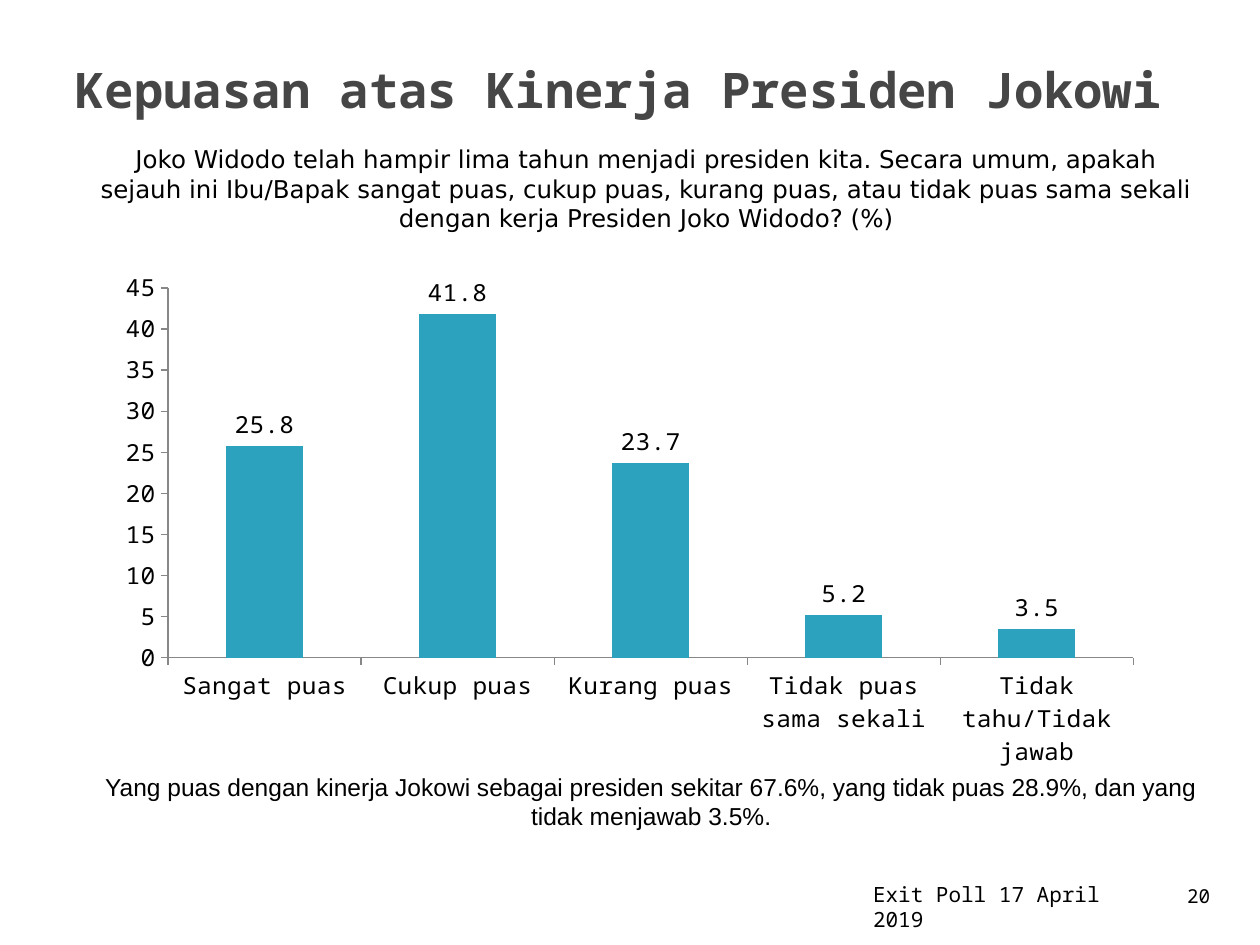
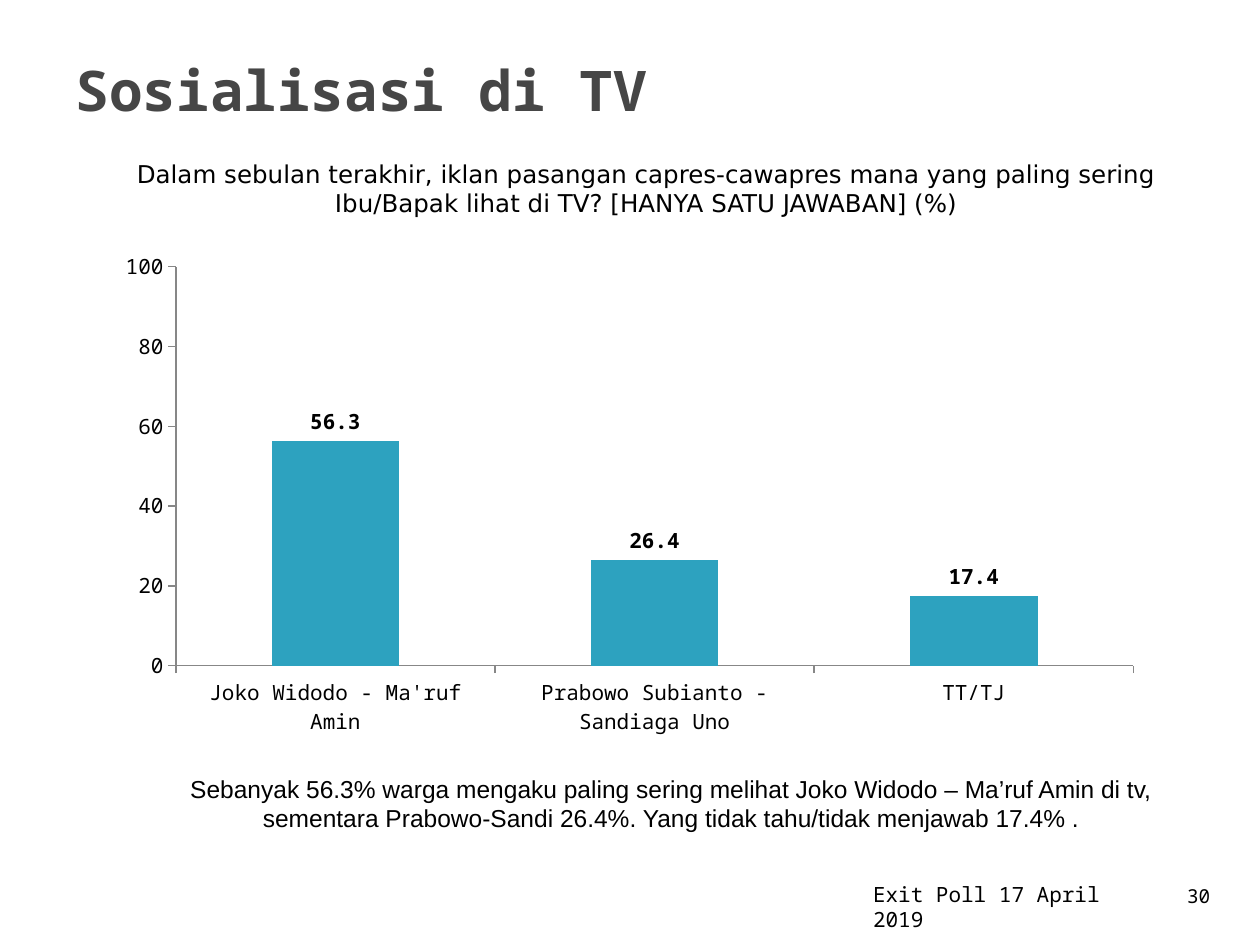
from pptx import Presentation
from pptx.chart.data import CategoryChartData
from pptx.dml.color import RGBColor
from pptx.enum.chart import XL_CHART_TYPE, XL_LABEL_POSITION, XL_TICK_MARK
from pptx.enum.text import MSO_ANCHOR, MSO_AUTO_SIZE, PP_ALIGN
from pptx.util import Cm, Pt

COLUMNS = XL_CHART_TYPE.COLUMN_CLUSTERED
OUTSIDE_END = XL_LABEL_POSITION.OUTSIDE_END
TICK_OUT, TICK_NONE = XL_TICK_MARK.OUTSIDE, XL_TICK_MARK.NONE
TOP, MIDDLE = MSO_ANCHOR.TOP, MSO_ANCHOR.MIDDLE
LEFT, CENTER = PP_ALIGN.LEFT, PP_ALIGN.CENTER
NO_AUTOFIT = MSO_AUTO_SIZE.NONE

MONO, QUESTION_FONT, NOTE_FONT = "Noto Sans Mono", "DejaVu Sans", "Arial"
TITLE_GREY, BLACK, BAR_TEAL, AXIS_GREY = "464646", "000000", "2DA2BF", "878787"
FOOTER = "Exit Poll 17 April 2019"

# Boxes are left, top, width, height in centimetres.
TITLE_BOX = (1.27, 0.2, 22.86, 3.18)
QUESTION_BOX = (1.7, 2.74, 22.66, 2.11)
NUMBER_BOX = (23.11, 17.53, 2.11, 1.07)
FOOTER_BOX = (17.35, 17.65, 5.33, 0.76)

SLIDES = [
    {
        "title": "Kepuasan atas Kinerja Presiden Jokowi",
        "title_size": 28,
        "question": "Joko Widodo telah hampir lima tahun menjadi presiden kita. "
                    "Secara umum, apakah sejauh ini Ibu/Bapak sangat puas, cukup puas, "
                    "kurang puas, atau tidak puas sama sekali dengan kerja "
                    "Presiden Joko Widodo? (%)",
        "chart_box": (2.11, 5.28, 21.16, 10.16),
        "chart_size": 14,
        "answers": {
            "Sangat puas": 25.8,
            "Cukup puas": 41.8,
            "Kurang puas": 23.7,
            "Tidak puas sama sekali": 5.2,
            "Tidak tahu/Tidak jawab": 3.5,
        },
        "maximum": 45,
        "step": 5,
        "label_format": "#,##0.0",
        "label_bold": False,
        "note": "Yang puas dengan kinerja Jokowi sebagai presiden sekitar 67.6%, "
                "yang tidak puas 28.9%, dan yang tidak menjawab 3.5%.",
        "note_box": (1.7, 15.44, 22.86, 1.45),
        "number": "20",
    },
    {
        "title": "Sosialisasi di TV",
        "title_size": 32,
        "question": "Dalam sebulan terakhir, iklan pasangan capres-cawapres mana yang "
                    "paling sering Ibu/Bapak lihat di TV? [HANYA SATU JAWABAN] (%)",
        "chart_box": (2.11, 4.88, 21.16, 10.16),
        "chart_size": 12,
        "answers": {
            "Joko Widodo - Ma'ruf Amin": 56.3,
            "Prabowo Subianto - Sandiaga Uno": 26.4,
            "TT/TJ": 17.4,
        },
        "maximum": 100,
        "step": 20,
        "label_format": "0.0",
        "label_bold": True,
        "note": "Sebanyak 56.3% warga mengaku paling sering melihat Joko Widodo – "
                "Ma’ruf Amin di tv, sementara Prabowo-Sandi 26.4%. "
                "Yang tidak tahu/tidak menjawab 17.4% .",
        "note_box": (2.74, 15.47, 21.59, 1.45),
        "number": "30",
    },
]


def rgb(hex_color):
    return RGBColor.from_string(hex_color)


def write(shape, box, text, font, size, color=BLACK, align=CENTER, anchor=MIDDLE, bold=False):
    """Place a text shape and fill it with one formatted paragraph."""
    for side, length in zip(("left", "top", "width", "height"), box):
        setattr(shape, side, Cm(length))
    frame = shape.text_frame
    frame.word_wrap = True
    frame.auto_size = NO_AUTOFIT
    frame.vertical_anchor = anchor
    frame.text = text
    paragraph = frame.paragraphs[0]
    paragraph.alignment = align
    for name, value in {"name": font, "size": Pt(size), "bold": bold}.items():
        setattr(paragraph.font, name, value)
    paragraph.font.color.rgb = rgb(color)


presentation = Presentation()
presentation.slide_width, presentation.slide_height = Cm(25.4), Cm(19.05)
title_only = presentation.slide_layouts[5]

for content in SLIDES:
    slide = presentation.slides.add_slide(title_only)
    write(slide.shapes.title, TITLE_BOX, content["title"], MONO, content["title_size"],
          color=TITLE_GREY, align=LEFT, bold=True)

    chart_data = CategoryChartData()
    chart_data.categories = content["answers"].keys()
    chart_data.add_series("Series 1", content["answers"].values())
    chart_place = [Cm(length) for length in content["chart_box"]]
    chart = slide.shapes.add_chart(COLUMNS, *chart_place, chart_data).chart
    chart.has_legend = False
    chart.has_title = False

    value_axis = chart.value_axis
    value_axis.has_major_gridlines = False
    value_axis.minimum_scale = 0
    value_axis.maximum_scale = content["maximum"]
    value_axis.major_unit = content["step"]
    for axis in (chart.category_axis, value_axis):
        axis.major_tick_mark = TICK_OUT
        axis.minor_tick_mark = TICK_NONE
        axis.format.line.color.rgb = rgb(AXIS_GREY)
        axis.format.line.width = Pt(0.75)

    plot = chart.plots[0]
    plot.gap_width = 150
    plot.vary_by_categories = False
    bars = plot.series[0].format.fill
    bars.solid()
    bars.fore_color.rgb = rgb(BAR_TEAL)

    plot.has_data_labels = True
    labels = plot.data_labels
    labels.show_value = True
    labels.position = OUTSIDE_END
    labels.number_format = content["label_format"]
    labels.number_format_is_linked = False
    for font in (chart.font, labels.font):
        font.name = MONO
        font.size = Pt(content["chart_size"])
        font.color.rgb = rgb(BLACK)
    labels.font.bold = content["label_bold"]

    for box, text, font, size, align, anchor in (
        (QUESTION_BOX, content["question"], QUESTION_FONT, 14, CENTER, MIDDLE),
        (NUMBER_BOX, content["number"], MONO, 11, CENTER, MIDDLE),
        (FOOTER_BOX, FOOTER, MONO, 12, LEFT, TOP),
        (content["note_box"], content["note"], NOTE_FONT, 14, CENTER, TOP),
    ):
        text_box = slide.shapes.add_textbox(0, 0, 0, 0)
        write(text_box, box, text, font, size, align=align, anchor=anchor)

presentation.save("out.pptx")
